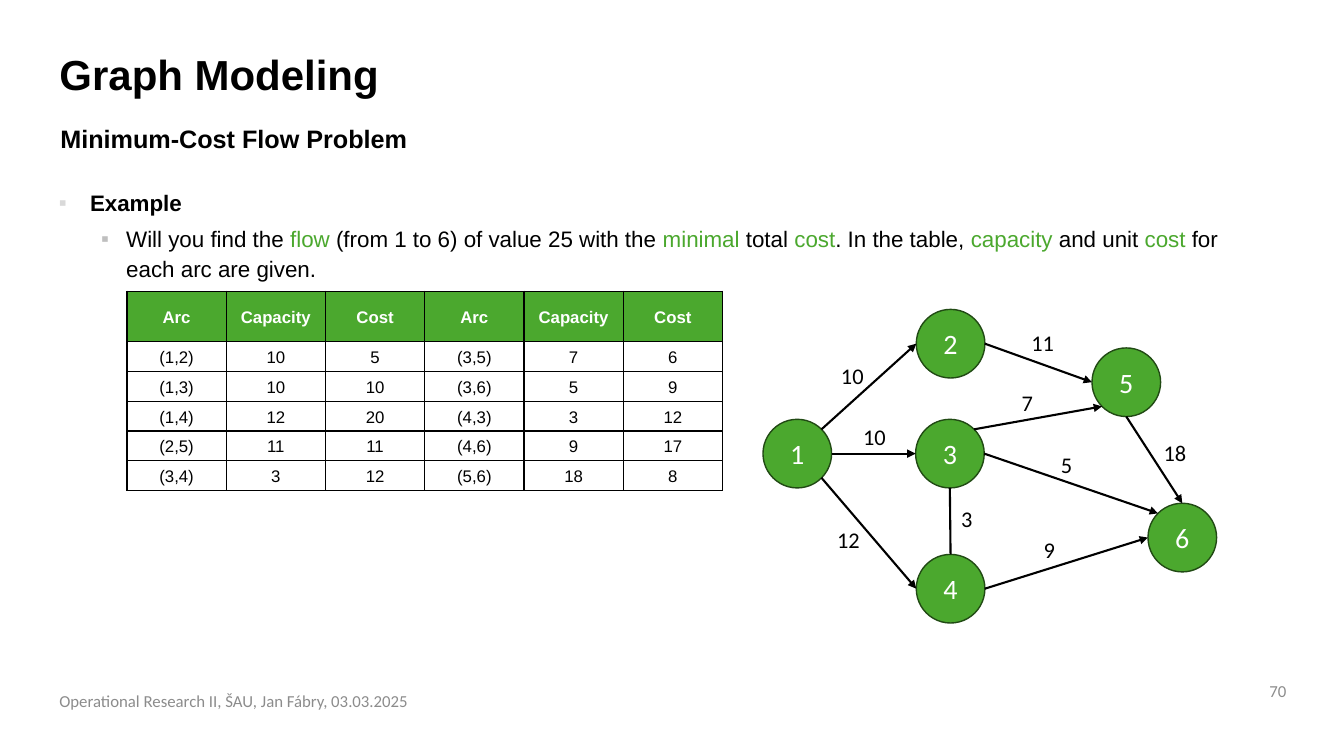
from math import cos, radians, sin

from lxml.etree import SubElement
from pptx import Presentation
from pptx.dml.color import RGBColor
from pptx.enum.shapes import MSO_CONNECTOR, MSO_SHAPE
from pptx.enum.text import MSO_ANCHOR, MSO_AUTO_SIZE, PP_ALIGN
from pptx.oxml import parse_xml
from pptx.oxml.ns import nsdecls, qn
from pptx.util import Pt

GREEN = RGBColor(0x4B, 0xA8, 0x2E)
DARK_GREEN = RGBColor(0x21, 0x4A, 0x14)
BLACK = RGBColor(0, 0, 0)
WHITE = RGBColor(255, 255, 255)
GRAY = RGBColor(0x8C, 0x8C, 0x8C)
BULLET_COLORS = [RGBColor(0xD9, 0xD9, 0xD9), RGBColor(0xBF, 0xBF, 0xBF)]

RIGHT, BOTTOM_RIGHT, BOTTOM, BOTTOM_LEFT = 0, 45, 90, 135
LEFT, TOP_LEFT, TOP, TOP_RIGHT = 180, 225, 270, 315

HEADERS = ["Arc", "Capacity", "Cost"]
ARC_DATA = [
    ("(1,2)", 10, 5), ("(1,3)", 10, 10), ("(1,4)", 12, 20),
    ("(2,5)", 11, 11), ("(3,4)", 3, 12),
    ("(3,5)", 7, 6), ("(3,6)", 5, 9), ("(4,3)", 3, 12),
    ("(4,6)", 9, 17), ("(5,6)", 18, 8),
]
NODE_SIZE = 49
NODE_CENTERS = {
    1: (569.5, 324), 2: (679, 245.5), 3: (678.5, 324),
    4: (679, 420.5), 5: (804.5, 273), 6: (844.5, 384),
}
ARCS = [
    (1, TOP_RIGHT, 2, LEFT, True, "10", 608.8, 268.2),
    (1, BOTTOM_RIGHT, 4, LEFT, True, "12", 606, 385.6),
    (2, RIGHT, 5, LEFT, True, "11", 744.8, 245.2),
    (4, TOP, 3, BOTTOM, False, "3", 690.5, 370.4),
    (5, BOTTOM, 6, TOP, True, "18", 839.2, 323.6),
    (4, RIGHT, 6, LEFT, True, "9", 749.5, 392.8),
    (1, RIGHT, 3, LEFT, True, "10", 624.6, 312.1),
    (3, RIGHT, 6, TOP_LEFT, True, "5", 761.8, 332.3),
    (3, TOP_RIGHT, 5, BOTTOM_LEFT, True, "7", 733.7, 287.6),
]
TASK = [
    ("Will you find the ", BLACK), ("flow", GREEN),
    (" (from 1 to 6) of value 25 with the ", BLACK), ("minimal", GREEN),
    (" total ", BLACK), ("cost", GREEN), (". In the table, ", BLACK),
    ("capacity", GREEN), (" and unit ", BLACK), ("cost", GREEN),
    (" for each arc are given.", BLACK),
]


def write(para, text, size=16, font="Arial", color=BLACK, bold=False,
          align=PP_ALIGN.LEFT, spacing=None):
    para.alignment = align
    if spacing:
        para.line_spacing = spacing
    span = para.add_run()
    span.text = text
    span.font.size = Pt(size)
    span.font.name = font
    span.font.color.rgb = color
    span.font.bold = bold


def rim_point(node, angle):
    x, y = NODE_CENTERS[node]
    radius = NODE_SIZE / 2
    return (Pt(x + radius * cos(radians(angle))),
            Pt(y + radius * sin(radians(angle))))


class GraphSlide:
    def __init__(self, deck):
        self.page = deck.slides.add_slide(deck.slide_layouts[5])
        self.shapes = self.page.shapes

    def title(self, text, left, top, width, height):
        box = self.shapes.title
        box.left, box.top, box.width, box.height = map(Pt, (left, top, width, height))
        box.text_frame.auto_size = MSO_AUTO_SIZE.NONE
        box.text_frame.vertical_anchor = MSO_ANCHOR.TOP
        write(box.text_frame.paragraphs[0], text, size=30, bold=True, spacing=0.9)

    def text_box(self, left, top, width, height, wrap=True, anchor=MSO_ANCHOR.TOP):
        frame = self.shapes.add_textbox(*map(Pt, (left, top, width, height))).text_frame
        frame.word_wrap = wrap
        frame.vertical_anchor = anchor
        return frame

    def label(self, text, left, top, width, height, wrap=True,
              anchor=MSO_ANCHOR.TOP, **style):
        frame = self.text_box(left, top, width, height, wrap, anchor)
        write(frame.paragraphs[0], text, **style)

    def bullet(self, para, level, indent, hanging):
        para.level = level
        properties = para._p.get_or_add_pPr()
        properties.set("marL", str(Pt(indent)))
        properties.set("indent", str(-Pt(hanging)))
        color = SubElement(properties, qn("a:buClr"))
        SubElement(color, qn("a:srgbClr")).set("val", str(BULLET_COLORS[level]))
        SubElement(properties, qn("a:buFont")).set("typeface", "Arial")
        SubElement(properties, qn("a:buChar")).set("char", "▪")

    def cell(self, cell, text, fill, **style):
        cell.margin_left = cell.margin_right = cell.margin_top = Pt(0.7)
        cell.margin_bottom = Pt(0)
        cell.vertical_anchor = MSO_ANCHOR.MIDDLE
        cell.fill.solid()
        cell.fill.fore_color.rgb = fill
        write(cell.text_frame.paragraphs[0], text, size=12,
              align=PP_ALIGN.CENTER, spacing=1.07, **style)
        for place, side in enumerate(("lnL", "lnR", "lnT", "lnB")):
            border = parse_xml(
                f'<a:{side} {nsdecls("a")} w="{Pt(1)}"><a:solidFill>'
                f'<a:srgbClr val="{BLACK}"/></a:solidFill></a:{side}>')
            cell._tc.get_or_add_tcPr().insert(place, border)

    def arc_table(self, left, top, width, header_height, row_height):
        half = len(ARC_DATA) // 2
        rows = [HEADERS * 2]
        rows += [a + b for a, b in zip(ARC_DATA[:half], ARC_DATA[half:])]
        height = header_height + half * row_height
        table = self.shapes.add_table(
            len(rows), len(rows[0]), *map(Pt, (left, top, width, height))).table
        table.horz_banding = False
        for column in table.columns:
            column.width = Pt(width / len(rows[0]))
        for r, row in enumerate(rows):
            header = r == 0
            table.rows[r].height = Pt(header_height if header else row_height)
            for c, value in enumerate(row):
                self.cell(table.cell(r, c), str(value), GREEN if header else WHITE,
                          color=WHITE if header else BLACK, bold=header)

    def node(self, number, x, y):
        circle = self.shapes.add_shape(
            MSO_SHAPE.OVAL, Pt(x - NODE_SIZE / 2), Pt(y - NODE_SIZE / 2),
            Pt(NODE_SIZE), Pt(NODE_SIZE))
        circle.shadow.inherit = False
        circle.fill.solid()
        circle.fill.fore_color.rgb = GREEN
        circle.line.color.rgb = DARK_GREEN
        circle.line.width = Pt(1)
        circle.text_frame.vertical_anchor = MSO_ANCHOR.MIDDLE
        write(circle.text_frame.paragraphs[0], str(number), size=20,
              font="Calibri", color=WHITE, align=PP_ALIGN.CENTER)

    def arc(self, start, start_angle, end, end_angle, arrow):
        line = self.shapes.add_connector(
            MSO_CONNECTOR.STRAIGHT, *rim_point(start, start_angle),
            *rim_point(end, end_angle))
        line.line.color.rgb = BLACK
        line.line.width = Pt(1.5)
        if arrow:
            SubElement(line.line._get_or_add_ln(), qn("a:tailEnd")).set("type", "triangle")
        SubElement(line._element.spPr, qn("a:effectLst"))


def main():
    deck = Presentation()
    deck.slide_width, deck.slide_height = Pt(960), Pt(540)
    slide = GraphSlide(deck)
    slide.title("Graph Modeling", 35.3, 35.3, 729, 41)
    slide.label("Minimum-Cost Flow Problem", 36, 84.2, 752, 29, size=18, bold=True)

    frame = slide.text_box(34.9, 129.6, 852, 297)
    example = frame.paragraphs[0]
    slide.bullet(example, 0, 22.3, 22.3)
    write(example, "Example", bold=True, spacing=1.1)
    task = frame.add_paragraph()
    slide.bullet(task, 1, 48.2, 18)
    task.space_before = Pt(5)
    for text, color in TASK:
        write(task, text, color=color, spacing=1.1)

    slide.arc_table(90.7, 208, 425.4, 36, 21.3)
    for number, center in NODE_CENTERS.items():
        slide.node(number, *center)
    for *ends, capacity, x, y in ARCS:
        slide.arc(*ends)
        slide.label(capacity, x - 15.5, y - 13.3, 31, 26.6, wrap=False,
                    font="Calibri", align=PP_ALIGN.CENTER)

    footer = dict(anchor=MSO_ANCHOR.MIDDLE, size=12, font="Calibri", color=GRAY)
    slide.label("Operational Research II, ŠAU, Jan Fábry, 03.03.2025",
                35.3, 486, 516, 28.8, **footer)
    slide.label("70", 885.9, 481.7, 40, 23.8, align=PP_ALIGN.RIGHT, **footer)
    deck.save("out.pptx")


if __name__ == "__main__":
    main()
